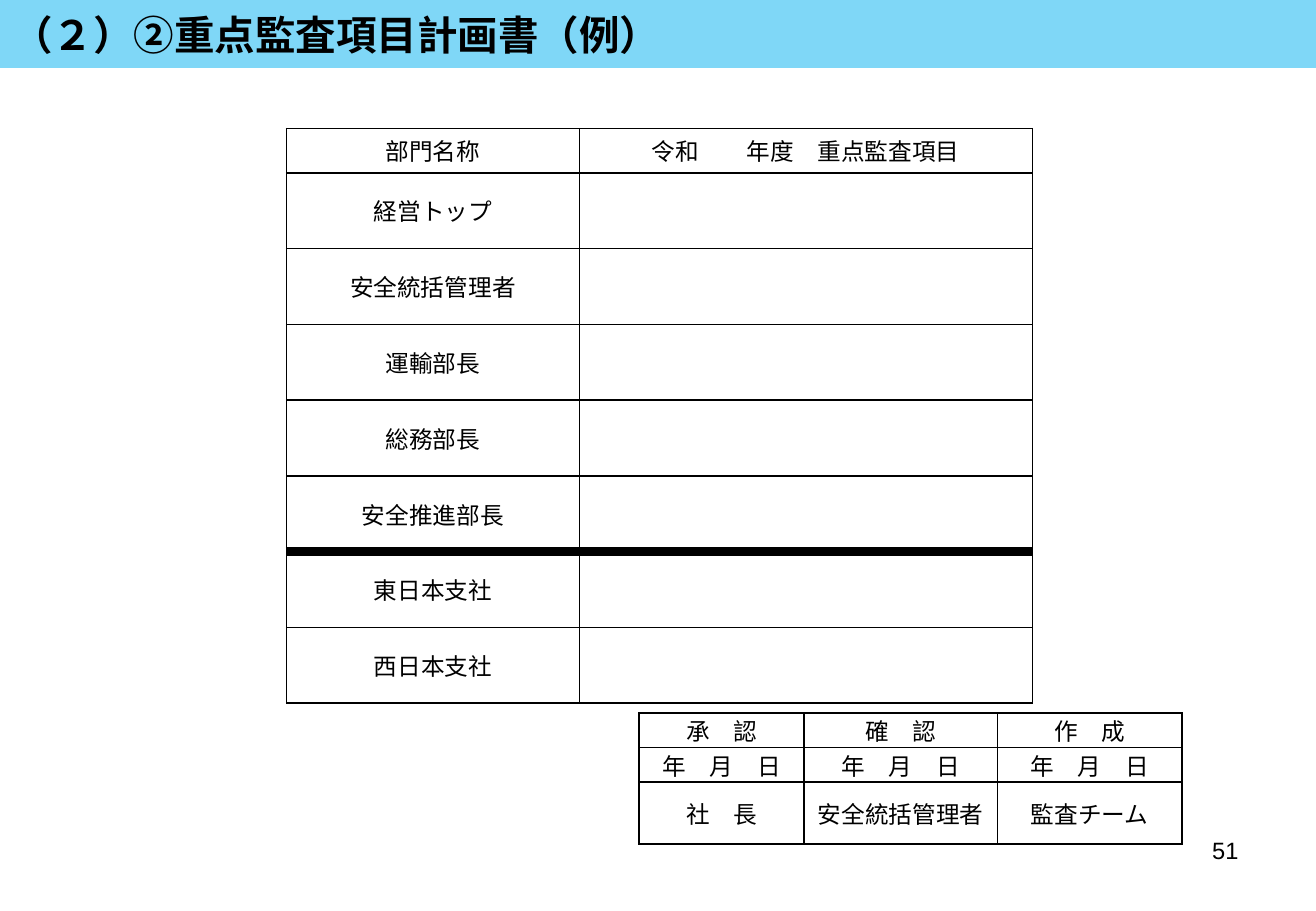
"""Build the priority audit item plan slide with its approval table."""
from lxml.etree import SubElement
from pptx import Presentation
from pptx.dml.color import RGBColor
from pptx.enum.text import MSO_ANCHOR as ANCHOR, PP_ALIGN as ALIGN
from pptx.oxml.ns import qn
from pptx.util import Cm, Pt

BLACK = RGBColor(0x00, 0x00, 0x00)
SKY = RGBColor(0x00, 0xB0, 0xF0)
CJK = "Noto Sans CJK JP"


def format_text(tf, size, font, align, bold=False):
    for p in tf.paragraphs:
        p.alignment = align
        for r in p.runs:
            r.font.size = Pt(size)
            r.font.bold = bold
            r.font.color.rgb = BLACK
            r.font.name = font
            SubElement(r._r.get_or_add_rPr(), qn("a:ea"), typeface=CJK)


def add_grid(s, left, top, widths, heights, rows, rules):
    frame = s.shapes.add_table(len(rows), len(widths), Cm(left), Cm(top),
                               Cm(sum(widths)), Cm(sum(heights)))
    table = frame.table
    table.first_row = table.horz_banding = False
    for col, width in zip(table.columns, widths):
        col.width = Cm(width)
    for row, height in zip(table.rows, heights):
        row.height = Cm(height)
    for i, texts in enumerate(rows):
        for j, text in enumerate(texts):
            cell = table.cell(i, j)
            cell.margin_left = cell.margin_right = Cm(0.18)
            cell.margin_top = cell.margin_bottom = 0
            cell.vertical_anchor = ANCHOR.MIDDLE
            cell.text_frame.text = text
            format_text(cell.text_frame, 14, CJK, ALIGN.CENTER)
            borders = {"lnL": 1, "lnR": 1, "lnT": rules.get(i, 1), "lnB": rules.get(i + 1, 1)}
            for side, width in borders.items():
                ln = SubElement(cell._tc.get_or_add_tcPr(), qn(f"a:{side}"), w=str(Pt(width)))
                fill = SubElement(ln, qn("a:solidFill"))
                SubElement(fill, qn("a:srgbClr"), val=str(BLACK))
            cell.fill.background()


prs = Presentation()
prs.slide_width = Cm(27.51)
prs.slide_height = Cm(19.05)
s = prs.slides.add_slide(prs.slide_layouts[5])

title = s.shapes.title
title.left, title.top, title.width, title.height = Cm(0), Cm(0), prs.slide_width, Cm(1.42)
title.fill.solid()
title.fill.fore_color.rgb = SKY
color = title.fill._xPr.find(qn("a:solidFill")).find(qn("a:srgbClr"))
SubElement(color, qn("a:alpha"), val="50000")
tf = title.text_frame
tf.text = "（２）②重点監査項目計画書（例）"
tf.vertical_anchor = ANCHOR.MIDDLE
format_text(tf, 24, "Arial", ALIGN.LEFT, bold=True)

departments = ["経営トップ", "安全統括管理者", "運輸部長", "総務部長",
               "安全推進部長", "東日本支社", "西日本支社"]
plan = [["部門名称", "令和　　年度　重点監査項目"]] + [[name, ""] for name in departments]
add_grid(s, 5.99, 2.69, [6.12, 9.47], [0.92] + [1.585] * len(departments), plan,
         {1: 1.5, 6: 6})

approval = [["承　認", "確　認", "作　成"],
            ["年　月　日"] * 3,
            ["社　長", "安全統括管理者", "監査チーム"]]
add_grid(s, 13.36, 14.91, [3.45, 4.04, 3.86], [0.72, 0.72, 1.3], approval, {})

number = s.shapes.add_textbox(Cm(19.71), Cm(17.35), Cm(6.43), Cm(1.32))
number.text_frame.word_wrap = True
number.text_frame.text = "51"
format_text(number.text_frame, 14, "Arial", ALIGN.RIGHT)

prs.save("out.pptx")
